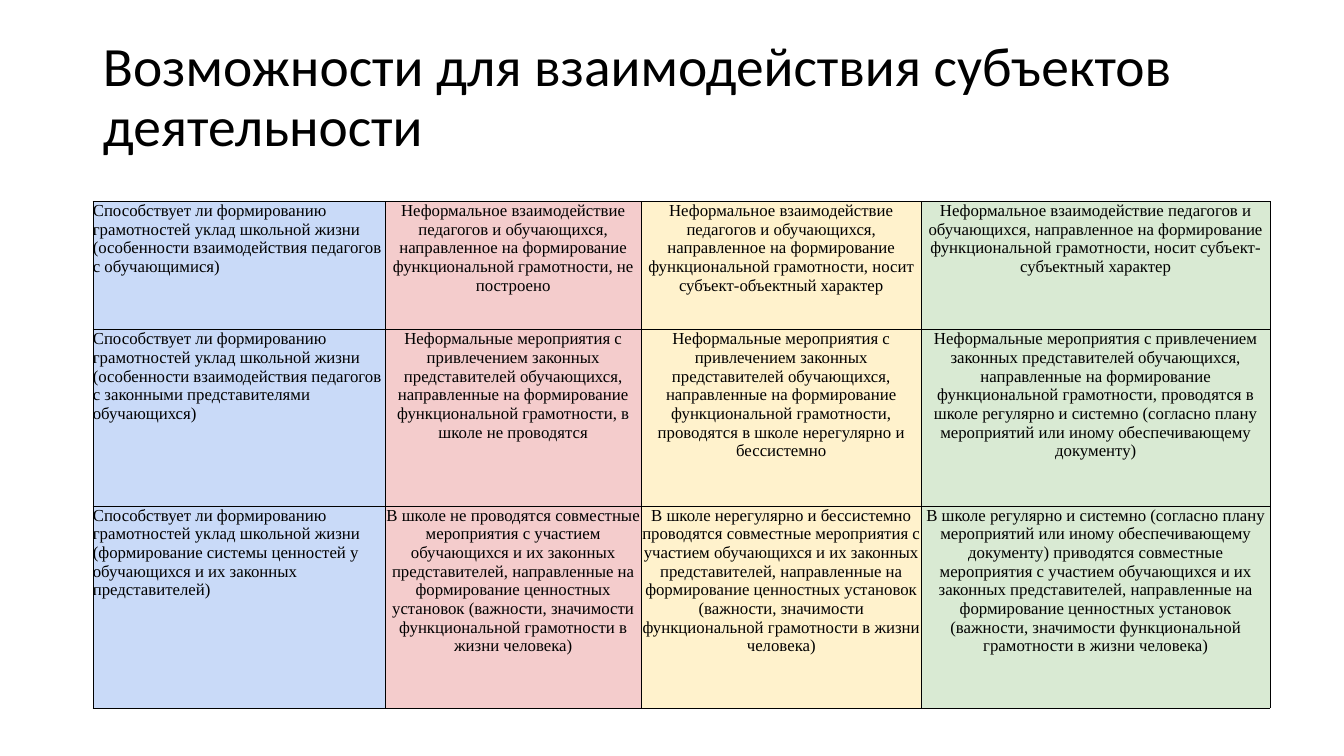
"""Build a slide with a table of ways school participants interact."""
from lxml.etree import SubElement
from pptx import Presentation
from pptx.dml.color import RGBColor
from pptx.enum.text import MSO_ANCHOR, MSO_AUTO_SIZE, PP_ALIGN
from pptx.oxml.ns import qn
from pptx.util import Cm, Pt

BLACK = RGBColor(0x00, 0x00, 0x00)
BLUE = RGBColor(0xC9, 0xDA, 0xF8)
RED = RGBColor(0xF4, 0xCC, 0xCC)
YELLOW = RGBColor(0xFF, 0xF2, 0xCC)
GREEN = RGBColor(0xD9, 0xEA, 0xD3)

FILLS = [BLUE, RED, YELLOW, GREEN]
WIDTHS = [7.37, 6.45, 7.06, 8.79]
HEIGHTS = [3.23, 4.45, 5.08]
ROWS = [
    [
        "Способствует ли формированию грамотностей уклад школьной жизни (особенности взаимодействия педагогов с обучающимися)",
        "Неформальное взаимодействие педагогов и обучающихся, направленное на формирование функциональной грамотности, не построено",
        "Неформальное взаимодействие педагогов и обучающихся, направленное на формирование функциональной грамотности, носит субъект-объектный характер",
        "Неформальное взаимодействие педагогов и обучающихся, направленное на формирование функциональной грамотности, носит субъект-субъектный характер",
    ],
    [
        "Способствует ли формированию грамотностей уклад школьной жизни (особенности взаимодействия педагогов с законными представителями обучающихся)",
        "Неформальные мероприятия с привлечением законных представителей обучающихся, направленные на формирование функциональной грамотности, в школе не проводятся",
        "Неформальные мероприятия с привлечением законных представителей обучающихся, направленные на формирование функциональной грамотности, проводятся в школе нерегулярно и бессистемно",
        "Неформальные мероприятия с привлечением законных представителей обучающихся, направленные на формирование функциональной грамотности, проводятся в школе регулярно и системно (согласно плану мероприятий или иному обеспечивающему документу)",
    ],
    [
        "Способствует ли формированию грамотностей уклад школьной жизни (формирование системы ценностей у обучающихся и их законных представителей)",
        "В школе не проводятся совместные мероприятия с участием обучающихся и их законных представителей, направленные на формирование ценностных установок (важности, значимости функциональной грамотности в жизни человека)",
        "В школе нерегулярно и бессистемно проводятся совместные мероприятия с участием обучающихся и их законных представителей, направленные на формирование ценностных установок (важности, значимости функциональной грамотности в жизни человека)",
        "В школе регулярно и системно (согласно плану мероприятий или иному обеспечивающему документу) приводятся совместные мероприятия с участием обучающихся и их законных представителей, направленные на формирование ценностных установок (важности, значимости функциональной грамотности в жизни человека)",
    ],
]


def style(par, name, size, align):
    par.alignment = align
    font = par.runs[0].font
    font.name, font.size = name, Pt(size)
    font.color.rgb = BLACK


def border(cell):
    props = cell._tc.get_or_add_tcPr()
    for n, side in enumerate(("a:lnL", "a:lnR", "a:lnT", "a:lnB")):
        line = props.makeelement(qn(side), {"w": str(Pt(0.5))})
        fill = SubElement(line, qn("a:solidFill"))
        SubElement(fill, qn("a:srgbClr"), val=str(BLACK))
        props.insert(n, line)


deck = Presentation()
deck.slide_width, deck.slide_height = Cm(33.87), Cm(19.05)
slide = deck.slides.add_slide(deck.slide_layouts[5])

title = slide.shapes.title
title.left, title.top = Cm(2.34), Cm(1.02)
title.width, title.height = Cm(29.21), Cm(2.92)
frame = title.text_frame
frame.text = "Возможности для взаимодействия субъектов деятельности"
frame.word_wrap = True
frame.auto_size = MSO_AUTO_SIZE.NONE
frame.vertical_anchor = MSO_ANCHOR.MIDDLE
frame.paragraphs[0].line_spacing = 0.9
style(frame.paragraphs[0], "Calibri", 39.6, PP_ALIGN.LEFT)

table = slide.shapes.add_table(
    len(HEIGHTS), len(WIDTHS), Cm(2.34), Cm(5.08), Cm(sum(WIDTHS)), Cm(sum(HEIGHTS))
).table
table.first_row = table.horz_banding = False
for col, width in zip(table.columns, WIDTHS):
    col.width = Cm(width)
for row, height, texts in zip(table.rows, HEIGHTS, ROWS):
    row.height = Cm(height)
    for n, (cell, text, color) in enumerate(zip(row.cells, texts, FILLS)):
        cell.text_frame.text = text
        cell.margin_left = cell.margin_right = cell.margin_top = cell.margin_bottom = 0
        cell.vertical_anchor = MSO_ANCHOR.TOP
        cell.fill.solid()
        cell.fill.fore_color.rgb = color
        border(cell)
        align = PP_ALIGN.CENTER if n else PP_ALIGN.LEFT
        style(cell.text_frame.paragraphs[0], "Times New Roman", 12, align)

deck.save("out.pptx")
